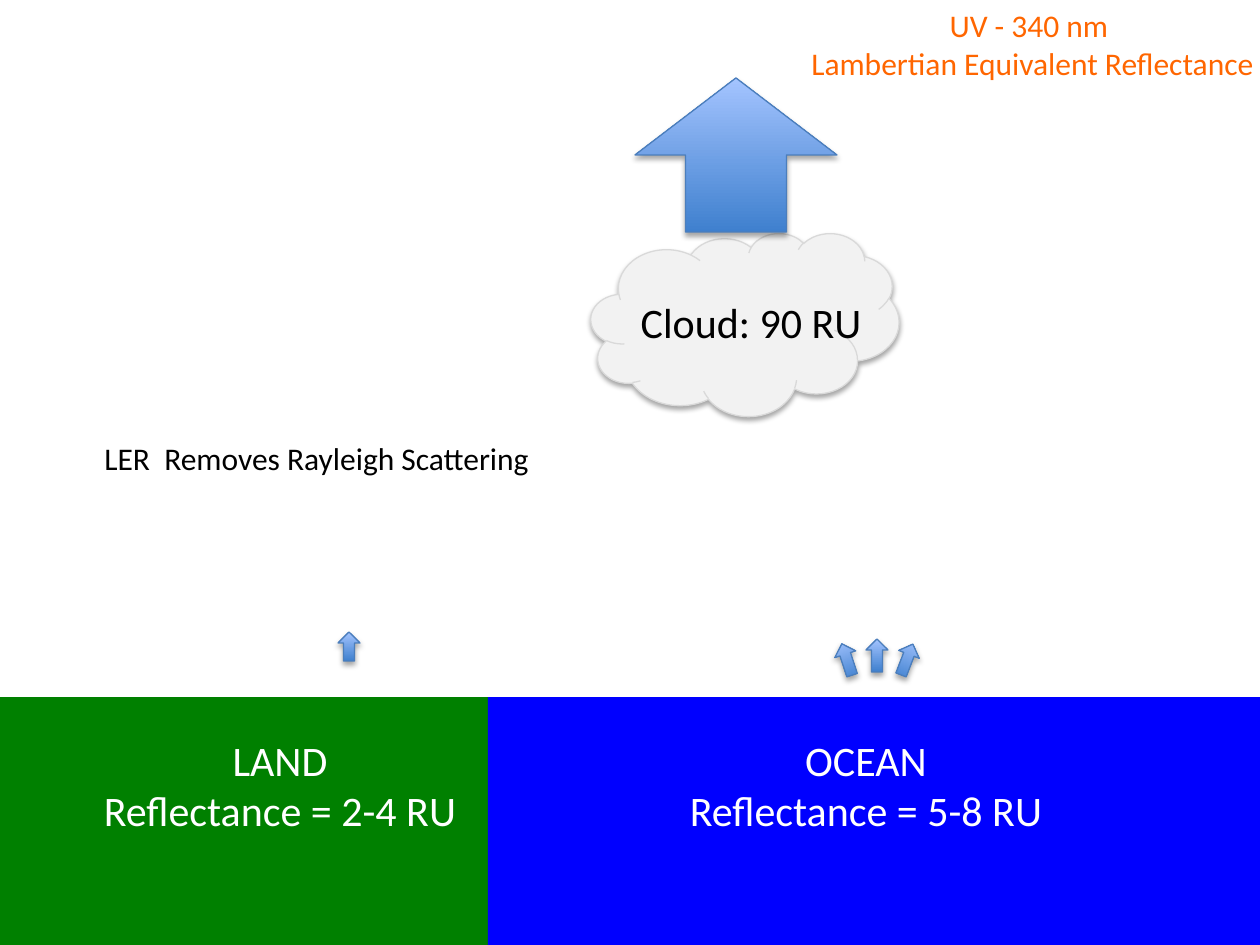
from lxml.etree import SubElement
from pptx import Presentation
from pptx.dml.color import RGBColor
from pptx.enum.shapes import MSO_SHAPE
from pptx.enum.text import MSO_AUTO_SIZE, PP_ALIGN
from pptx.oxml.ns import qn
from pptx.util import Pt

SCALE = 914400 / 126


def px(*sizes):
    """Turn pixel lengths into EMU."""
    return [round(size * SCALE) for size in sizes]


def paint(color, code):
    """Set a colour from a hex string."""
    color.rgb = RGBColor.from_string(code)


def form(slide, kind, box):
    """Add a preset shape without a shadow."""
    shape = slide.shapes.add_shape(kind, *px(*box))
    shape.shadow.inherit = False
    return shape


def fill(shape, code):
    """Fill a shape with one colour."""
    shape.fill.solid()
    paint(shape.fill.fore_color, code)


def edge(shape, code):
    """Give a shape a thin outline."""
    shape.line.width = Pt(0.75)
    paint(shape.line.color, code)


def shade(shape):
    """Drop a soft shadow straight below a shape."""
    effects = shape._element.spPr.find(qn("a:effectLst"))
    outer = SubElement(effects, qn("a:outerShdw"), blurRad=str(Pt(3.1)),
                       dist=str(Pt(1.8)), dir="5400000", rotWithShape="0")
    color = SubElement(outer, qn("a:srgbClr"), val="000000")
    SubElement(color, qn("a:alpha"), val="35000")


def ground(slide, box, code):
    """Add a flat block of surface."""
    block = form(slide, MSO_SHAPE.RECTANGLE, box)
    fill(block, code)
    block.line.fill.background()


def cloud(slide, box):
    """Add the grey cloud."""
    shape = form(slide, MSO_SHAPE.CLOUD, box)
    fill(shape, "F2F2F2")
    edge(shape, "D9D9D9")
    shade(shape)


def arrow(slide, box, turn=0):
    """Add an up arrow that grows lighter towards its tip."""
    shape = form(slide, MSO_SHAPE.UP_ARROW, box)
    shape.rotation = turn
    shape.fill.gradient()
    shape.fill.gradient_angle = 90
    for stop, code in zip(shape.fill.gradient_stops, ("3F80CE", "A4C4FF")):
        paint(stop.color, code)
    edge(shape, "4B7EBC")
    shade(shape)


def label(slide, box, text, size, code, align=PP_ALIGN.CENTER, wrap=False):
    """Add a text box with one style."""
    frame = slide.shapes.add_textbox(*px(*box)).text_frame
    frame.word_wrap = wrap
    frame.auto_size = MSO_AUTO_SIZE.SHAPE_TO_FIT_TEXT
    frame.text = text
    for para in frame.paragraphs:
        para.alignment = align
        for run in para.runs:
            run.font.name = "Calibri"
            run.font.size = Pt(size)
            paint(run.font.color, code)


def main():
    """Build the reflectance slide."""
    deck = Presentation()
    deck.slide_width, deck.slide_height = px(1260, 945)
    slide = deck.slides.add_slide(deck.slide_layouts[6])

    ground(slide, (0, 697, 488, 248), "008000")
    ground(slide, (488, 697, 772, 248), "0000FF")
    label(slide, (89, 728, 382, 115), "LAND\nReflectance = 2-4 RU", 24, "FFFFFF")
    label(slide, (675, 728, 382, 115), "OCEAN\nReflectance = 5-8 RU", 24, "FFFFFF")

    cloud(slide, (591, 233, 308, 183))
    label(slide, (627, 290, 248, 63), "Cloud: 90 RU", 24, "000000")
    label(slide, (92, 433, 478, 50), "LER  Removes Rayleigh Scattering",
          18, "000000", PP_ALIGN.LEFT, True)
    arrow(slide, (635, 78, 202, 154))
    label(slide, (796, 0, 473, 89),
          "UV - 340 nm \nLambertian Equivalent Reflectance", 18, "FF6600")

    arrow(slide, (338, 632, 22, 29))
    for step, (top, turn) in enumerate(((643, 341.9), (639, 0), (643, 21))):
        arrow(slide, (836 + 30 * step, top, 22, 33), turn)

    deck.save("out.pptx")


if __name__ == "__main__":
    main()
